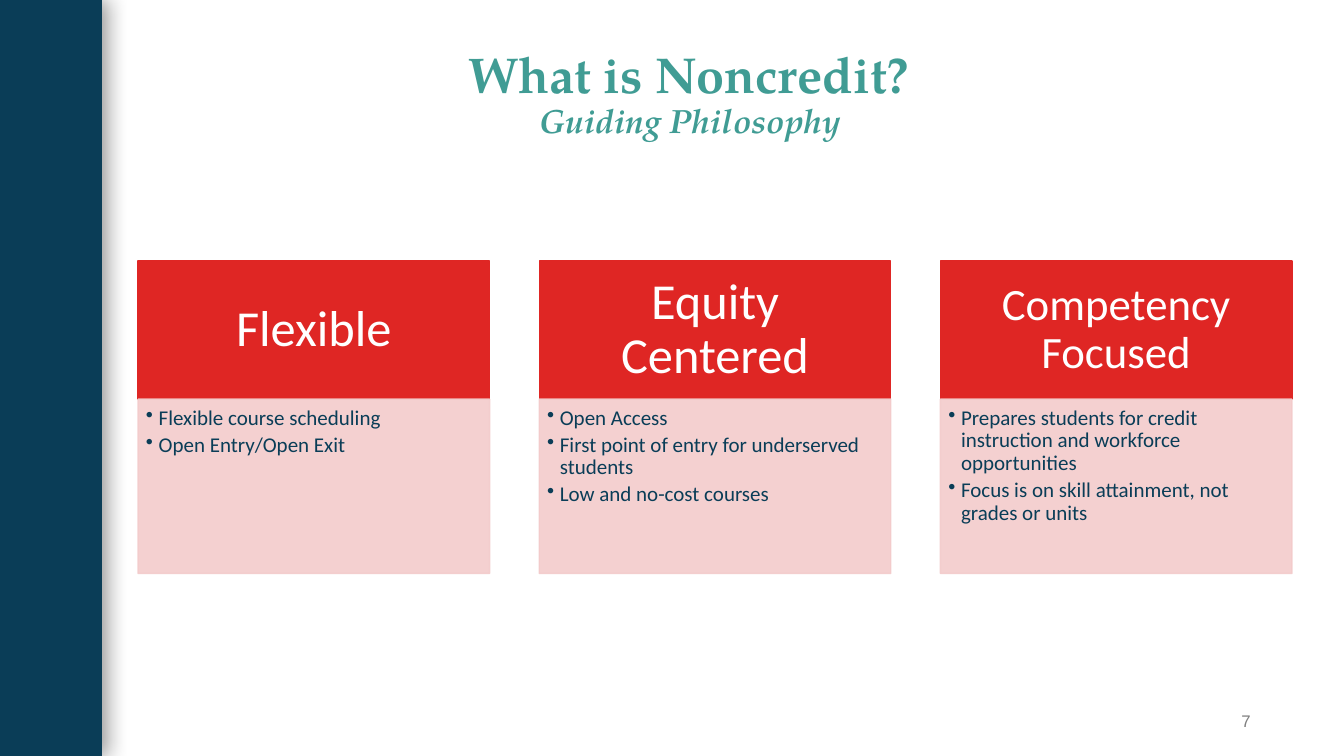
"""Builds a slide with three cards on the guiding philosophy of noncredit."""
from lxml import etree
from pptx import Presentation
from pptx.dml.color import RGBColor
from pptx.enum.shapes import MSO_SHAPE
from pptx.enum.text import MSO_ANCHOR, PP_ALIGN
from pptx.oxml.ns import qn
from pptx.util import Cm, Pt

RECTANGLE = MSO_SHAPE.RECTANGLE
TOP, MIDDLE = MSO_ANCHOR.TOP, MSO_ANCHOR.MIDDLE
LEFT, CENTER, RIGHT = PP_ALIGN.LEFT, PP_ALIGN.CENTER, PP_ALIGN.RIGHT
NAVY, TEAL, RED, PINK = "0A3D57", "409C94", "DF2624", "F3CBCB"
WHITE, GRAY, BLACK = "FFFFFF", "7F7F7F", "000000"

TITLE = "What is Noncredit? "
SUBTITLE = "Guiding Philosophy "
PAGE_NUMBER = "7"
CARDS = [
    ("Flexible", 36, ["Flexible course scheduling", "Open Entry/Open Exit"]),
    ("Equity Centered", 36, [
        "Open Access",
        "First point of entry for underserved students",
        "Low and no-cost courses",
    ]),
    ("Competency Focused", 32, [
        "Prepares students for credit instruction and workforce opportunities",
        "Focus is on skill attainment, not grades or units",
    ]),
]

PAGE_WIDTH, PAGE_HEIGHT = 33.87, 19.05
CARD_LEFT, CARD_TOP, CARD_WIDTH, CARD_STEP = 3.48, 6.58, 8.86, 10.11
HEAD_HEIGHT, BODY_HEIGHT = 3.48, 4.39
BULLET_INDENT = 0.32


def color(value):
    return RGBColor.from_string(value)


def add_child(parent, tag, **attributes):
    values = {name: str(value) for name, value in attributes.items()}
    return etree.SubElement(parent, qn(tag), values)


def set_frame(shape, insets, anchor):
    frame = shape.text_frame
    frame.word_wrap = True
    frame.vertical_anchor = anchor
    (frame.margin_left, frame.margin_top,
     frame.margin_right, frame.margin_bottom) = [Cm(inset) for inset in insets]
    return frame


def set_paragraph(para, align, name, size, hue, spacing=0.9):
    para.alignment = align
    para.line_spacing = spacing
    para.font.name = name
    para.font.size = Pt(size)
    para.font.color.rgb = color(hue)


def add_box(page, left, top, width, height, hue):
    box = page.shapes.add_shape(RECTANGLE, Cm(left), Cm(top), Cm(width), Cm(height))
    box.shadow.inherit = False
    box.fill.solid()
    box.fill.fore_color.rgb = color(hue)
    box.line.color.rgb = color(hue)
    box.line.width = Pt(1)
    return box


def add_sidebar(page):
    bar = add_box(page, 0, 0, 2.57, PAGE_HEIGHT, NAVY)
    bar.line.fill.background()
    effects = bar._element.spPr.find(qn("a:effectLst"))
    shadow = add_child(effects, "a:outerShdw", blurRad=Pt(15), dist=Pt(3), dir=0)
    add_child(add_child(shadow, "a:srgbClr", val=BLACK), "a:alpha", val=40000)


def add_title(page):
    box = page.shapes.add_textbox(Cm(3.56), Cm(1.02), Cm(27.91), Cm(3.68))
    para = set_frame(box, [0.25] * 4, TOP).paragraphs[0]
    set_paragraph(para, CENTER, "TeX Gyre Pagella", 36, TEAL)
    para.font.bold = True
    para.add_run().text = TITLE
    para.add_line_break()
    span = para.add_run()
    span.text = SUBTITLE
    span.font.size = Pt(24)
    span.font.italic = True


def add_card(page, left, heading, size, points):
    head = add_box(page, left, CARD_TOP, CARD_WIDTH, HEAD_HEIGHT, RED)
    para = set_frame(head, [0.71, 0.41, 0.71, 0.41], MIDDLE).paragraphs[0]
    para.text = heading
    set_paragraph(para, CENTER, "Calibri", size, WHITE)

    body = add_box(page, left, CARD_TOP + HEAD_HEIGHT, CARD_WIDTH, BODY_HEIGHT, PINK)
    for tint in body._element.spPr.iter(qn("a:srgbClr")):
        add_child(tint, "a:alpha", val=90000)
    frame = set_frame(body, [0.2, 0.2, 0.28, 0.3], TOP)
    for index, point in enumerate(points):
        para = frame.add_paragraph() if index else frame.paragraphs[0]
        para.text = point
        set_paragraph(para, LEFT, "Calibri", 15, NAVY)
        para.space_before = Pt(3 if index else 0)
        properties = para._p.get_or_add_pPr()
        properties.set("marL", str(Cm(BULLET_INDENT)))
        properties.set("indent", str(-Cm(BULLET_INDENT)))
        default_run = properties.find(qn("a:defRPr"))
        bullet_color = add_child(properties, "a:buClr")
        add_child(bullet_color, "a:srgbClr", val=NAVY)
        add_child(properties, "a:buChar", char="•")
        properties.append(default_run)


def add_page_number(page):
    box = page.shapes.add_textbox(Cm(28.98), Cm(17.65), Cm(2.54), Cm(1.02))
    para = set_frame(box, [0.25, 0.13, 0, 0.13], MIDDLE).paragraphs[0]
    para.text = PAGE_NUMBER
    set_paragraph(para, RIGHT, "Arial", 12, GRAY, 1.0)


def main():
    deck = Presentation()
    deck.slide_width, deck.slide_height = Cm(PAGE_WIDTH), Cm(PAGE_HEIGHT)
    page = deck.slides.add_slide(deck.slide_layouts[6])
    add_sidebar(page)
    add_title(page)
    for index, card in enumerate(CARDS):
        add_card(page, CARD_LEFT + index * CARD_STEP, *card)
    add_page_number(page)
    deck.save("out.pptx")


if __name__ == "__main__":
    main()
